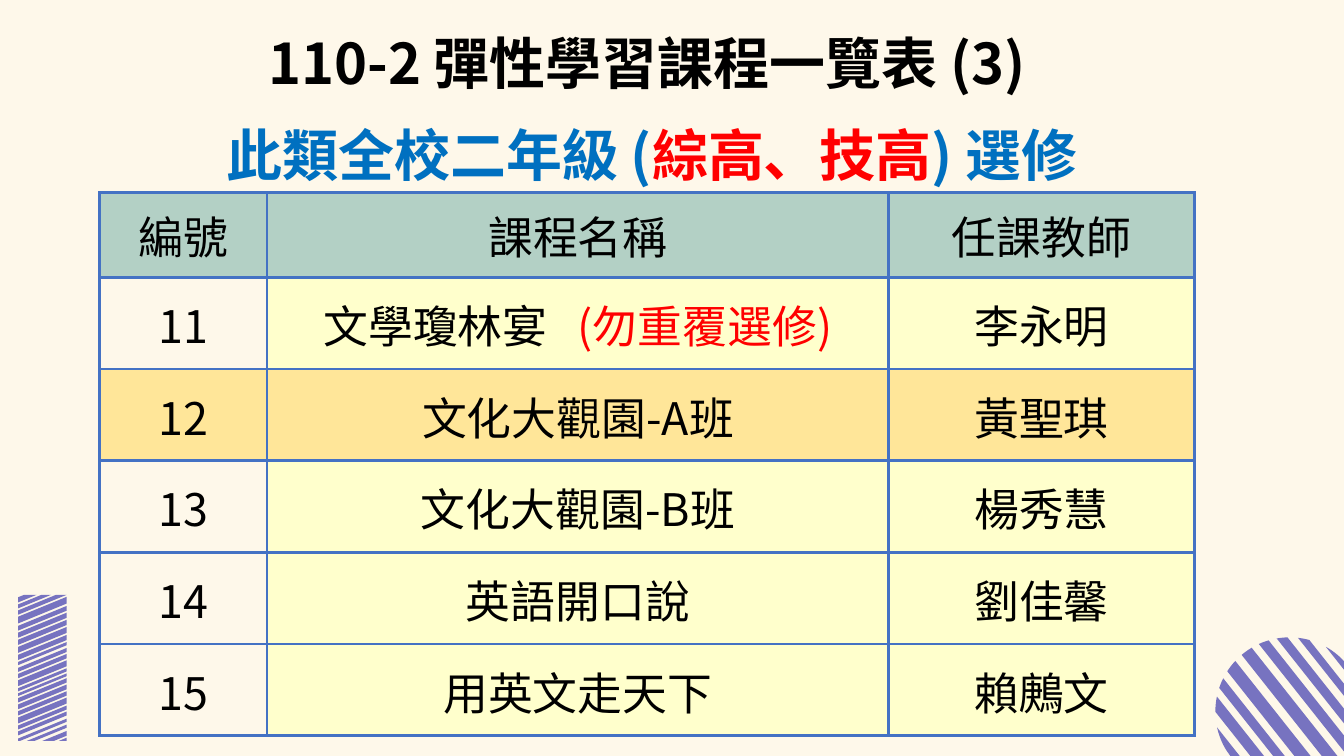
from math import cos, radians, sin, sqrt

from lxml.etree import SubElement
from pptx import Presentation
from pptx.dml.color import RGBColor
from pptx.enum.text import MSO_ANCHOR, PP_ALIGN
from pptx.oxml.ns import qn
from pptx.util import Cm, Pt

THEME = {
    "font": "Noto Sans CJK SC",
    "heading_size": 40, "table_size": 32, "border_width": 2.25,
    "page": "FEF8EA", "black": "000000", "blue": "0070C0", "red": "FF0000",
    "stripe": "7773C0", "border": "4472C4",
    "header": "B3D0C5", "plain": "FFFFCC", "highlight": "FFE699",
}

HEADINGS = [
    {"at": (2.01, 2.54, 28.85, 2.69), "spacing": 1.15,
     "runs": [("此類全校二年級 (", "blue"), ("綜高、技高", "red"), (") 選修", "blue")]},
    {"at": (4.47, 0.66, 23.67, 2.31), "spacing": 0.9,
     "runs": [("110-2 彈性學習課程一覽表 (3)", "black")]},
]

COURSES = [
    ("編號", "課程名稱", "任課教師"),
    ("11", "文學瓊林宴", "李永明"),
    ("12", "文化大觀園-A班", "黃聖琪"),
    ("13", "文化大觀園-B班", "楊秀慧"),
    ("14", "英語開口說", "劉佳馨"),
    ("15", "用英文走天下", "賴鶊文"),
]
WARNINGS = {"文學瓊林宴": "(勿重覆選修)"}
WARNING_GAP = 14.3
HIGHLIGHTED = "12"
TABLE_AT = (2.51, 4.85)
COLUMNS = (4.22, 15.67, 7.7)
HEADER_HEIGHT, COURSE_HEIGHT = 1.78, 2.31

BAR = {"left": 0.46, "right": 1.68, "top": 14.99, "bottom": 18.67, "drop": 0.5}
BAR_STRIPES = [
    (14.55, 14.68), (14.73, 14.83), (14.88, 14.99), (15.04, 15.21), (15.27, 15.39),
    (15.44, 15.57), (15.62, 15.75), (15.8, 15.95), (16, 16.13), (16.18, 16.26),
    (16.33, 16.43), (16.48, 16.59), (16.64, 16.79), (16.84, 16.92), (16.97, 17.04),
    (17.09, 17.2), (17.25, 17.37), (17.42, 17.53), (17.58, 17.73), (17.78, 17.88),
    (17.93, 18.03), (18.11, 18.19), (18.26, 18.34), (18.42, 18.54), (18.59, 18.67),
]
DISC = {"x": 32.5, "y": 17.93, "radius": 1.87, "angle": 51.6}
DISC_STRIPES = [
    (-1.87, -1.68), (-1.47, -1.2), (-1.02, -0.79), (-0.6, -0.28), (-0.06, 0.25),
    (0.45, 0.7), (0.89, 1.12), (1.32, 1.51), (1.73, 1.87),
]
ARC_STEPS = 10


def colour(name):
    return RGBColor.from_string(THEME[name])


def write_run(paragraph, text, ink, size, bold=False):
    run = paragraph.add_run()
    run.text = text
    formats = {"name": THEME["font"], "size": Pt(THEME[size]), "bold": bold}
    for attribute, value in formats.items():
        setattr(run.font, attribute, value)
    run.font.color.rgb = colour(ink)
    SubElement(run.font._element, qn("a:ea"), typeface=THEME["font"])
    return run


def set_insets(target, sides, bottom):
    for side in ("left", "right", "top"):
        setattr(target, f"margin_{side}", Cm(sides))
    target.margin_bottom = Cm(bottom)


def clip(outline, limit, sign):
    kept = []
    for (x1, y1), (x2, y2) in zip(outline, outline[1:] + outline[:1]):
        inside, next_inside = sign * (y1 - limit) >= 0, sign * (y2 - limit) >= 0
        if inside:
            kept.append((x1, y1))
        if inside != next_inside:
            kept.append((x1 + (x2 - x1) * (limit - y1) / (y2 - y1), limit))
    return kept


def bar_stripe(upper, lower):
    left, right, drop = BAR["left"], BAR["right"], BAR["drop"]
    outline = [(right, upper), (right, lower), (left, lower + drop), (left, upper + drop)]
    return clip(clip(outline, BAR["top"], 1), BAR["bottom"], -1)


def disc_stripe(near, far):
    along, across = cos(radians(DISC["angle"])), sin(radians(DISC["angle"]))
    offsets = [near + (far - near) * step / ARC_STEPS for step in range(ARC_STEPS + 1)]
    ends = [(offset, sqrt(max(0, DISC["radius"] ** 2 - offset ** 2))) for offset in offsets]
    ends += [(offset, -half) for offset, half in reversed(ends)]
    return [(DISC["x"] + half * along + offset * across,
             DISC["y"] + half * across - offset * along) for offset, half in ends]


def add_stripes(slide, outlines):
    contours = [[(Cm(x), Cm(y)) for x, y in outline] for outline in outlines]
    builder = slide.shapes.build_freeform(*contours[0][0], scale=1.0)
    for index, contour in enumerate(contours):
        if index:
            builder.move_to(*contour[0])
        builder.add_line_segments(contour[1:], close=True)
    stripes = builder.convert_to_shape()
    stripes.shadow.inherit = False
    stripes.fill.solid()
    stripes.fill.fore_color.rgb = colour("stripe")
    stripes.line.fill.background()


def add_borders(cell):
    properties = cell._tc.get_or_add_tcPr()
    for side in ("lnL", "lnR", "lnT", "lnB"):
        line = SubElement(properties, qn(f"a:{side}"), w=str(Pt(THEME["border_width"])))
        SubElement(SubElement(line, qn("a:solidFill")), qn("a:srgbClr"), val=THEME["border"])


def cell_fill(row, column):
    if row == 0:
        return "header"
    if COURSES[row][0] == HIGHLIGHTED:
        return "highlight"
    return "plain" if column else None


def add_courses(slide):
    height = HEADER_HEIGHT + COURSE_HEIGHT * (len(COURSES) - 1)
    frame = (*TABLE_AT, sum(COLUMNS), height)
    table = slide.shapes.add_table(len(COURSES), len(COLUMNS), *map(Cm, frame)).table
    table.first_row = table.horz_banding = False
    for column, width in enumerate(COLUMNS):
        table.columns[column].width = Cm(width)
    for row, course in enumerate(COURSES):
        table.rows[row].height = Cm(COURSE_HEIGHT if row else HEADER_HEIGHT)
        for column, entry in enumerate(course):
            cell = table.cell(row, column)
            cell.vertical_anchor = MSO_ANCHOR.MIDDLE
            set_insets(cell, *((0.03, 0) if row else (0.25, 0.25)))
            add_borders(cell)
            fill = cell_fill(row, column)
            if fill:
                cell.fill.solid()
                cell.fill.fore_color.rgb = colour(fill)
            else:
                cell.fill.background()
            paragraph = cell.text_frame.paragraphs[0]
            paragraph.alignment = PP_ALIGN.CENTER
            write_run(paragraph, entry, "black", "table_size")
            if entry in WARNINGS:
                gap = write_run(paragraph, " ", "black", "table_size")
                gap.font._element.set("spc", str(round(WARNING_GAP * 100)))
                write_run(paragraph, WARNINGS[entry], "red", "table_size")


def add_heading(slide, heading):
    frame = slide.shapes.add_textbox(*map(Cm, heading["at"])).text_frame
    frame.word_wrap = True
    set_insets(frame, 0.25, 0.25)
    paragraph = frame.paragraphs[0]
    paragraph.alignment = PP_ALIGN.CENTER
    paragraph.line_spacing = heading["spacing"]
    for text, ink in heading["runs"]:
        write_run(paragraph, text, ink, "heading_size", bold=True)


def main():
    deck = Presentation()
    deck.slide_width, deck.slide_height = Cm(33.87), Cm(19.05)
    slide = deck.slides.add_slide(deck.slide_layouts[6])
    slide.background.fill.solid()
    slide.background.fill.fore_color.rgb = colour("page")
    add_stripes(slide, [disc_stripe(*stripe) for stripe in DISC_STRIPES])
    add_stripes(slide, [bar_stripe(*stripe) for stripe in BAR_STRIPES])
    add_courses(slide)
    for heading in HEADINGS:
        add_heading(slide, heading)
    deck.save("out.pptx")


if __name__ == "__main__":
    main()
